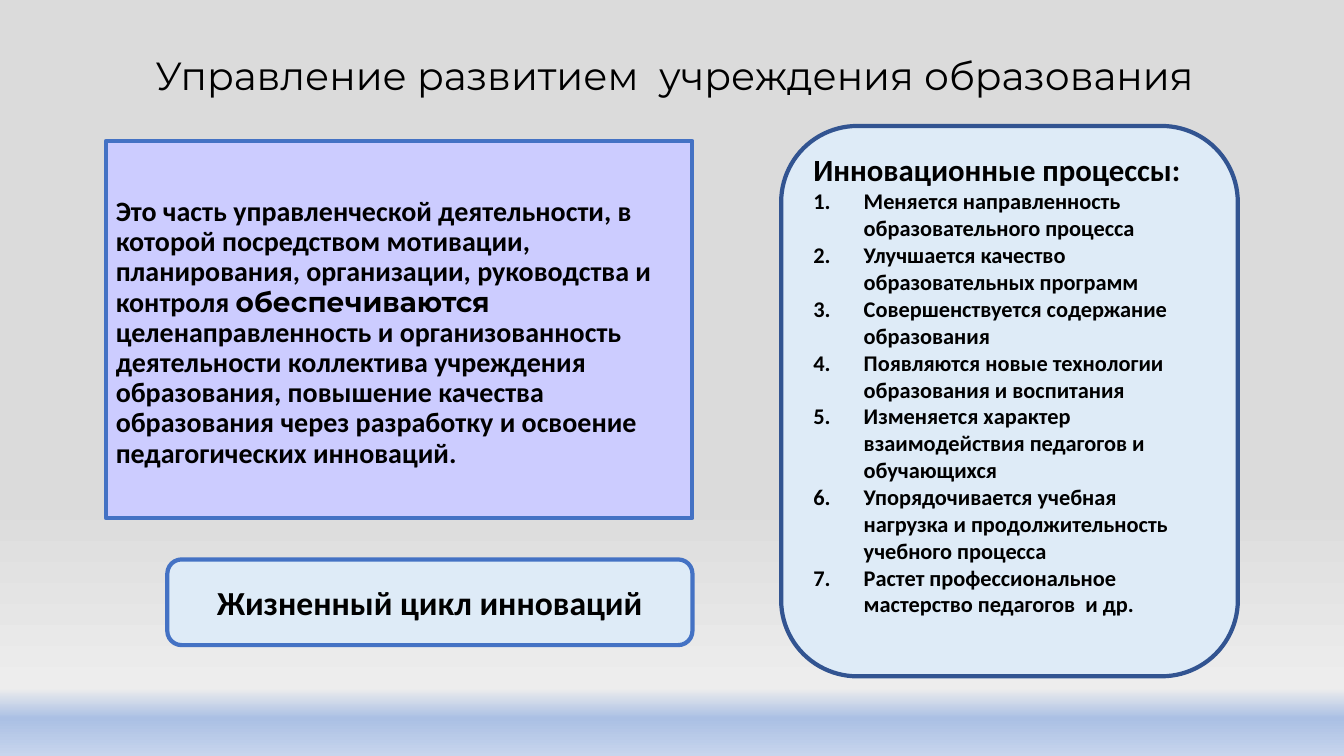
from pptx import Presentation
from pptx.dml.color import RGBColor
from pptx.enum.shapes import MSO_SHAPE
from pptx.enum.text import MSO_ANCHOR, PP_ALIGN
from pptx.oxml.ns import qn
from pptx.util import Pt
from lxml import etree

RECTANGLE, ROUNDED = MSO_SHAPE.RECTANGLE, MSO_SHAPE.ROUNDED_RECTANGLE
TOP, MIDDLE = MSO_ANCHOR.TOP, MSO_ANCHOR.MIDDLE
LEFT, CENTER = PP_ALIGN.LEFT, PP_ALIGN.CENTER

BLACK = RGBColor(0x00, 0x00, 0x00)
LAVENDER = RGBColor(0xCC, 0xCC, 0xFF)
PALE_BLUE = RGBColor(0xDE, 0xEB, 0xF7)
BLUE = RGBColor(0x44, 0x72, 0xC4)
DARK_BLUE = RGBColor(0x32, 0x54, 0x91)
BACKGROUND_STOPS = [
    (66, RGBColor(0xDB, 0xDB, 0xDB)),
    (91, RGBColor(0xED, 0xED, 0xED)),
    (95, RGBColor(0xAB, 0xC0, 0xE4)),
    (100, RGBColor(0xC7, 0xD5, 0xED)),
]

DEFINITION = [
    ("Это часть управленческой деятельности, в которой посредством мотивации, "
     "планирования, организации, руководства и контроля ", "Calibri"),
    ("обеспечиваются ", "Montserrat"),
    ("целенаправленность и организованность деятельности коллектива учреждения "
     "образования, повышение качества образования через разработку и освоение "
     "педагогических инноваций.", "Calibri"),
]
PROCESSES = [
    "Меняется направленность образовательного процесса",
    "Улучшается качество образовательных программ",
    "Совершенствуется содержание образования",
    "Появляются новые технологии образования и воспитания",
    "Изменяется характер взаимодействия педагогов и обучающихся",
    "Упорядочивается учебная нагрузка и продолжительность учебного процесса",
    "Растет профессиональное мастерство педагогов  и др.",
]


def write(paragraph, text, size, font="Calibri", bold=True, align=LEFT, spacing=1.0):
    paragraph.alignment = align
    paragraph.line_spacing = spacing
    run = paragraph.add_run()
    run.text = text
    run.font.size = Pt(size)
    run.font.name = font
    run.font.bold = bold
    run.font.color.rgb = BLACK


def add_panel(kind, box, fill, line, anchor=MIDDLE):
    shape = slide.shapes.add_shape(kind, *map(Pt, box))
    shape.shadow.inherit = False
    shape.fill.solid()
    shape.fill.fore_color.rgb = fill
    shape.line.color.rgb = line
    shape.line.width = Pt(3)
    shape.text_frame.word_wrap = True
    shape.text_frame.vertical_anchor = anchor
    return shape.text_frame


presentation = Presentation()
presentation.slide_width, presentation.slide_height = Pt(960), Pt(540)
slide = presentation.slides.add_slide(presentation.slide_layouts[6])

background = slide.background.fill
background.gradient()
background.gradient_angle = 270
stop_list = slide.element.find(".//" + qn("a:gsLst"))
for stop in list(stop_list):
    stop_list.remove(stop)
for position, color in BACKGROUND_STOPS:
    stop = etree.SubElement(stop_list, qn("a:gs"), pos=str(position * 1000))
    etree.SubElement(stop, qn("a:srgbClr"), val=str(color))

title = slide.shapes.add_textbox(Pt(28.8), Pt(10), Pt(905.8), Pt(90.7)).text_frame
title.word_wrap = True
title.vertical_anchor = MIDDLE
write(title.paragraphs[0], "Управление развитием  учреждения образования", 28,
      font="Montserrat", bold=False, align=CENTER, spacing=0.9)

definition = add_panel(RECTANGLE, (75.6, 100.8, 419, 269.3), LAVENDER, BLUE, TOP)
definition.margin_top = Pt(40)
for text, font in DEFINITION:
    write(definition.paragraphs[0], text, 20, font=font, spacing=0.9)

processes = add_panel(ROUNDED, (558, 90, 326.2, 393.1), PALE_BLUE, DARK_BLUE)
processes.margin_bottom = Pt(28)
write(processes.paragraphs[0], "Инновационные процессы:", 22)
for text in PROCESSES:
    paragraph = processes.add_paragraph()
    write(paragraph, text, 16)
    properties = paragraph._p.get_or_add_pPr()
    properties.set("marL", str(Pt(36)))
    properties.set("indent", str(-Pt(36)))
    etree.SubElement(properties, qn("a:buFont"), typeface="+mj-lt")
    etree.SubElement(properties, qn("a:buAutoNum"), type="arabicPeriod")

life_cycle = add_panel(ROUNDED, (119.5, 399.6, 375.1, 61.2), PALE_BLUE, BLUE)
write(life_cycle.paragraphs[0], "Жизненный цикл инноваций", 24, align=CENTER)

presentation.save("out.pptx")
